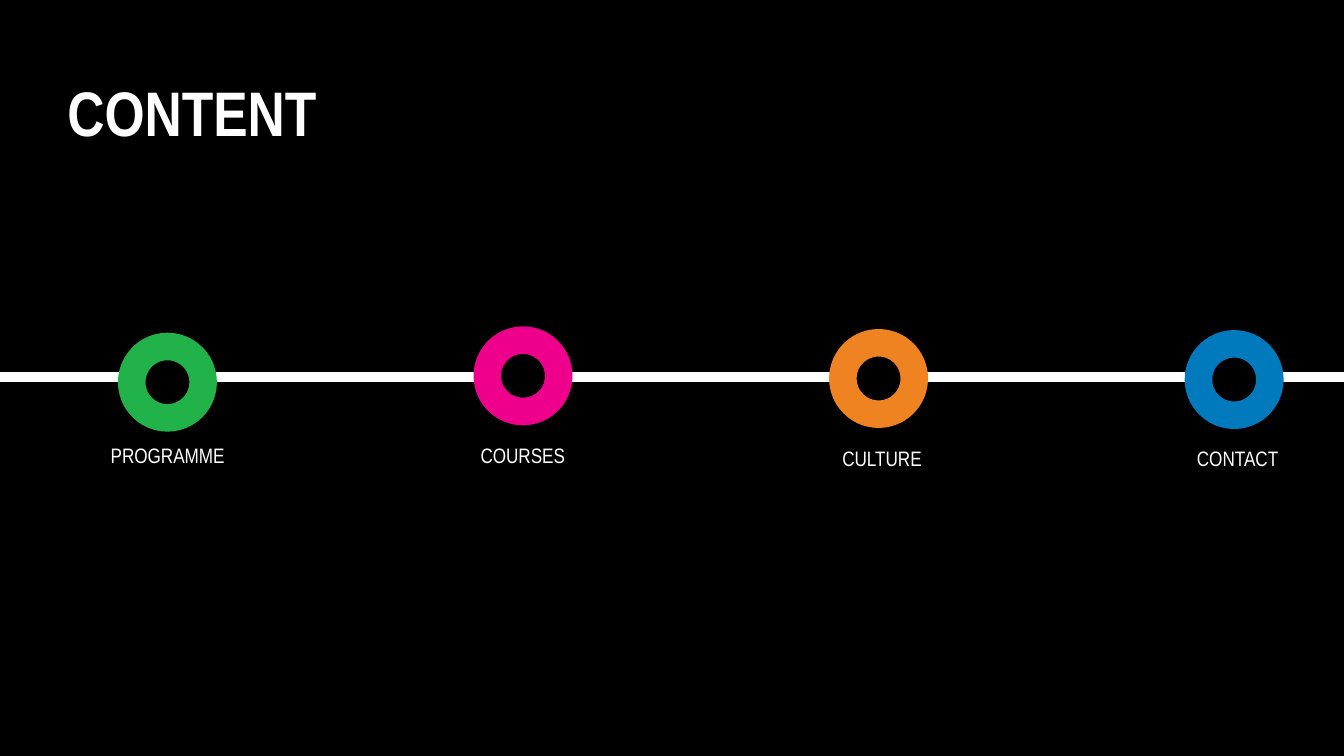
from pptx import Presentation
from pptx import util as u
from pptx.dml.color import RGBColor
from pptx.enum import shapes, text

BLACK = RGBColor(0x00, 0x00, 0x00)
WHITE = RGBColor(0xFF, 0xFF, 0xFF)
GREEN = RGBColor(0x21, 0xB2, 0x4A)
PINK = RGBColor(0xEF, 0x00, 0x8C)
ORANGE = RGBColor(0xEF, 0x82, 0x21)
BLUE = RGBColor(0x00, 0x79, 0xBD)

RING = 1.35
FIRST = 2.49
PITCH = 6.72

STOPS = [
    ("PROGRAMME", GREEN, 6.55, 3.17, 8.25, 2.69),
    ("COURSES", PINK, 6.43, 9.88, 8.25, 2.13),
    ("CULTURE", ORANGE, 6.48, 16.67, 8.29, 2.06),
    ("CONTACT", BLUE, 6.5, 23.39, 8.29, 2.08),
]


def format_all(item, values):
    for name, value in values.items():
        setattr(item, name, value)


def write(frame, words, size, bold, align):
    line = frame.paragraphs[0]
    line.alignment = align
    run = line.add_run()
    run.text = words
    format_all(run.font, {"name": "Arial Narrow", "size": u.Pt(size), "bold": bold})
    run.font.color.rgb = WHITE


def add_solid(slide, kind, left, top, width, height, fill):
    shape = slide.shapes.add_shape(
        kind, u.Cm(left), u.Cm(top), u.Cm(width), u.Cm(height))
    shape.shadow.inherit = False
    shape.fill.solid()
    shape.fill.fore_color.rgb = fill
    return shape


def add_track(slide):
    track = add_solid(slide, shapes.MSO_SHAPE.FLOWCHART_PROCESS,
                      0, 7.04, 25.4, 0.18, WHITE)
    track.line.fill.background()


def add_ring(slide, left, top, color):
    ring = add_solid(slide, shapes.MSO_SHAPE.OVAL, left, top, RING, RING, BLACK)
    ring.line.color.rgb = color
    ring.line.width = u.Pt(14.75)


def add_label(slide, words, center, top, width):
    box = slide.shapes.add_textbox(
        u.Cm(center - width / 2), u.Cm(top), u.Cm(width), u.Cm(0.74))
    format_all(box.text_frame, {
        "word_wrap": False,
        "auto_size": text.MSO_AUTO_SIZE.SHAPE_TO_FIT_TEXT,
    })
    write(box.text_frame, words, 11.2, False, text.PP_ALIGN.CENTER)


def set_title(slide, words):
    title = slide.shapes.title
    format_all(title, {
        "left": u.Cm(1.02), "top": u.Cm(1.27),
        "width": u.Cm(16.59), "height": u.Cm(3.15),
    })
    format_all(title.text_frame, {
        "word_wrap": True,
        "vertical_anchor": text.MSO_ANCHOR.TOP,
        "auto_size": text.MSO_AUTO_SIZE.NONE,
    })
    write(title.text_frame, words, 33.7, True, text.PP_ALIGN.LEFT)


def main():
    deck = Presentation()
    deck.slide_width, deck.slide_height = u.Cm(25.4), u.Cm(14.29)
    slide = deck.slides.add_slide(deck.slide_layouts[5])
    slide.background.fill.solid()
    slide.background.fill.fore_color.rgb = BLACK

    set_title(slide, "CONTENT")
    add_track(slide)
    for i, (words, color, top, center, base, width) in enumerate(STOPS):
        add_ring(slide, FIRST + i * PITCH, top, color)
        add_label(slide, words, center, base, width)
    deck.save("out.pptx")


if __name__ == "__main__":
    main()
